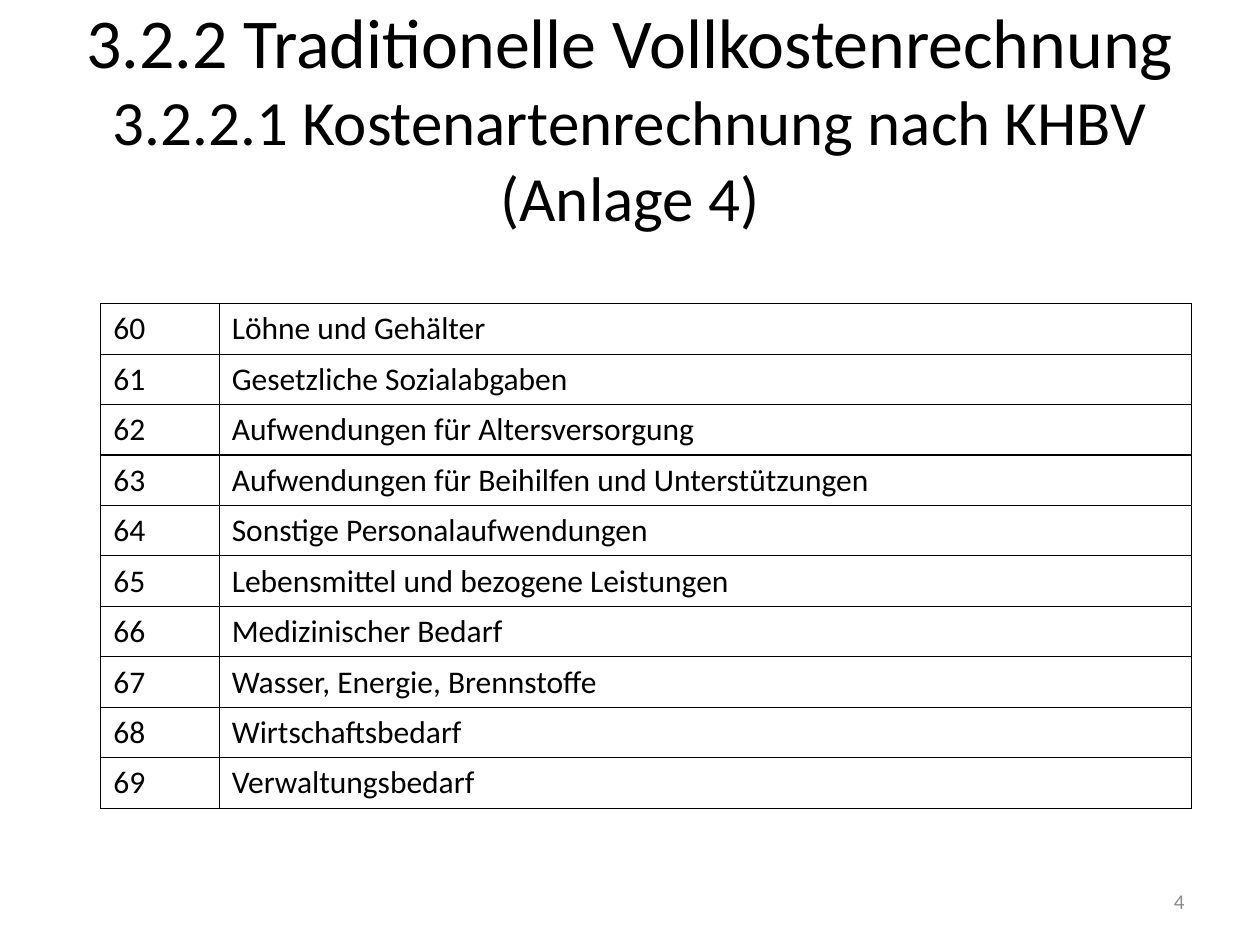
from lxml import etree
from pptx import Presentation
from pptx.dml.color import RGBColor
from pptx.enum.text import MSO_ANCHOR, PP_ALIGN
from pptx.oxml.ns import qn
from pptx.util import Inches, Pt

TITLE = "3.2.2 Traditionelle Vollkostenrechnung"
SUBTITLE = "3.2.2.1 Kostenartenrechnung nach KHBV (Anlage 4)"
PAGE = "4"
FIRST_ACCOUNT = 60
ACCOUNTS = [
    "Löhne und Gehälter",
    "Gesetzliche Sozialabgaben",
    "Aufwendungen für Altersversorgung",
    "Aufwendungen für Beihilfen und Unterstützungen",
    "Sonstige Personalaufwendungen",
    "Lebensmittel und bezogene Leistungen",
    "Medizinischer Bedarf",
    "Wasser, Energie, Brennstoffe",
    "Wirtschaftsbedarf",
    "Verwaltungsbedarf",
]
COL_WIDTHS = (0.94, 7.72)
ROW_HEIGHT = 0.4

FONT = "Calibri"
BLACK = RGBColor(0x00, 0x00, 0x00)
GRAY = RGBColor(0x8C, 0x8C, 0x8C)
CENTER, RIGHT = PP_ALIGN.CENTER, PP_ALIGN.RIGHT
MIDDLE = MSO_ANCHOR.MIDDLE


def style(p, size, color):
    p.font.name = FONT
    p.font.size = Pt(size)
    p.font.color.rgb = color


def add_text(slide, box, size, color, align):
    tf = slide.shapes.add_textbox(*map(Inches, box)).text_frame
    tf.word_wrap = True
    tf.vertical_anchor = MIDDLE
    p = tf.paragraphs[0]
    p.alignment = align
    style(p, size, color)
    return p


def set_borders(cell):
    tc_pr = cell._tc.get_or_add_tcPr()
    for i, side in enumerate(("lnL", "lnR", "lnT", "lnB")):
        ln = etree.Element(qn(f"a:{side}"), w=str(Pt(0.75)))
        fill = etree.SubElement(ln, qn("a:solidFill"))
        etree.SubElement(fill, qn("a:srgbClr"), val=str(BLACK))
        tc_pr.insert(i, ln)


def add_accounts(slide):
    rows = [(str(n), name) for n, name in enumerate(ACCOUNTS, FIRST_ACCOUNT)]
    table = slide.shapes.add_table(
        len(rows), len(COL_WIDTHS), Inches(0.8), Inches(2.41),
        Inches(sum(COL_WIDTHS)), Inches(ROW_HEIGHT * len(rows))).table
    table.first_row = False
    table.horz_banding = False
    for col, width in zip(table.columns, COL_WIDTHS):
        col.width = Inches(width)
    for row, texts in zip(table.rows, rows):
        for cell, text in zip(row.cells, texts):
            cell.text = text
            style(cell.text_frame.paragraphs[0], 18, BLACK)
            cell.fill.background()
            set_borders(cell)


def main():
    prs = Presentation()
    prs.slide_width, prs.slide_height = Inches(10), Inches(7.5)
    slide = prs.slides.add_slide(prs.slide_layouts[6])

    p = add_text(slide, (0.5, 0.3, 9, 1.25), 36, BLACK, CENTER)
    r = p.add_run()
    r.text = TITLE
    r.font.size = Pt(40)
    p.add_line_break()
    p.add_run().text = SUBTITLE

    add_accounts(slide)
    add_text(slide, (7.17, 6.95, 2.33, 0.4), 12, GRAY, RIGHT).add_run().text = PAGE
    prs.save("out.pptx")


if __name__ == "__main__":
    main()
